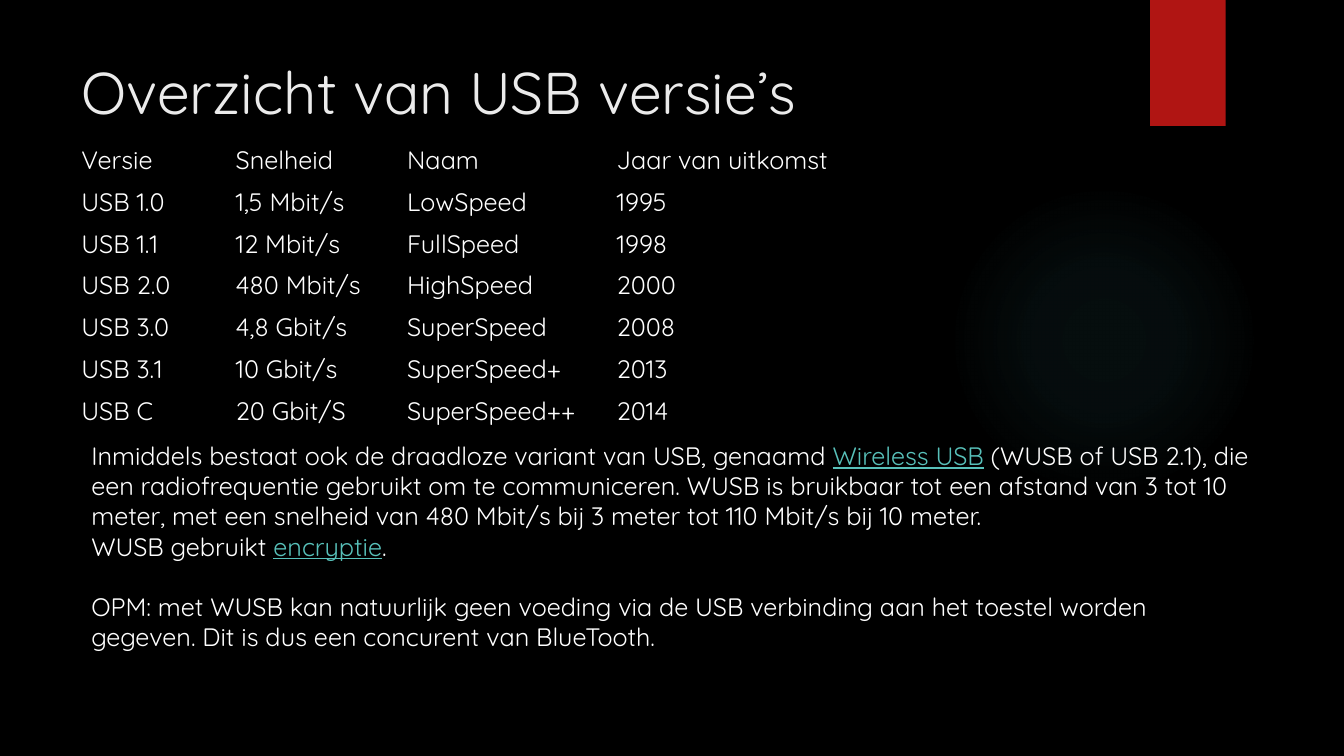
from dataclasses import dataclass

from lxml import etree
from pptx import Presentation
from pptx.dml.color import RGBColor
from pptx.enum.shapes import MSO_SHAPE
from pptx.enum.text import MSO_ANCHOR, MSO_AUTO_SIZE, PP_ALIGN
from pptx.oxml import parse_xml
from pptx.oxml.ns import qn
from pptx.util import Pt

OVAL, RECT = MSO_SHAPE.OVAL, MSO_SHAPE.RECTANGLE
TOP, MIDDLE = MSO_ANCHOR.TOP, MSO_ANCHOR.MIDDLE
NO_FIT, LEFT = MSO_AUTO_SIZE.NONE, PP_ALIGN.LEFT

COLORS = {
    "background": "000000", "title": "EBEBEB", "text": "FFFFFF",
    "link": "58C1BA", "ribbon": "B01513", "glow": "50B9C1", "shadow": "000000",
}
FONT = "Quicksand"
BODY_SIZE = 18
ROW_HEIGHT = 29.87
COLUMN_WIDTHS = (110.16, 122.4, 149.76, 236.16, 16.56)
NO_STYLE_NO_GRID = "{2D5ABB26-0587-4C30-8999-92F81FD0307C}"
A_NS = "http://schemas.openxmlformats.org/drawingml/2006/main"
GLOW_STOPS = ((0, 7), (36, 6), (69, 0))  # position and opacity, in percent

VERSIONS = (
    ("Versie", "Snelheid", "Naam", "Jaar van uitkomst"),
    ("USB 1.0", "1,5 Mbit/s", "LowSpeed", "1995"),
    ("USB 1.1", "12 Mbit/s", "FullSpeed", "1998"),
    ("USB 2.0", "480 Mbit/s", "HighSpeed", "2000"),
    ("USB 3.0", "4,8 Gbit/s", "SuperSpeed", "2008"),
    ("USB 3.1", "10 Gbit/s", "SuperSpeed+", "2013"),
    ("USB C", "20 Gbit/S", "SuperSpeed++", "2014"),
)


@dataclass(frozen=True)
class Span:
    text: str
    link: bool = False


@dataclass(frozen=True)
class Para:
    spans: tuple[Span, ...]
    space_before: float = 0


WIRELESS = (
    Para((
        Span("Inmiddels bestaat ook de draadloze variant van USB, genaamd "),
        Span("Wireless USB", link=True),
        Span(" (WUSB of USB 2.1), die een radiofrequentie gebruikt om te "
             "communiceren. WUSB is bruikbaar tot een afstand van 3 tot 10 meter, "
             "met een snelheid van 480 Mbit/s bij 3 meter tot 110 Mbit/s bij 10 meter."),
    )),
    Para((Span("WUSB gebruikt "), Span("encryptie", link=True), Span("."))),
    Para((
        Span("OPM: met WUSB kan natuurlijk geen voeding via de USB verbinding aan "
             "het toestel worden gegeven. Dit is dus een concurent van BlueTooth."),
    ), space_before=21.6),
)


def rgb(name: str) -> RGBColor:
    return RGBColor.from_string(COLORS[name])


def add_run(p, text: str, size: float = BODY_SIZE, color: str = "text"):
    r = p.add_run()
    r.text = text
    r.font.name, r.font.size = FONT, Pt(size)
    r.font.color.rgb = rgb(color)
    return r


def add_plain_shape(s, kind, left: float, top: float, width: float, height: float):
    sp = s.shapes.add_shape(kind, Pt(left), Pt(top), Pt(width), Pt(height))
    sp.shadow.inherit = False
    sp.line.fill.background()
    return sp


def add_glow(s) -> None:
    """Faint radial gradient that fades out towards its rim."""
    sp = add_plain_shape(s, OVAL, 677.5, 131.8, 221.8, 221.8)
    sp.fill.background()
    stops = "".join(
        f'<a:gs pos="{pos * 1000}"><a:srgbClr val="{COLORS["glow"]}">'
        f'<a:alpha val="{alpha * 1000}"/></a:srgbClr></a:gs>'
        for pos, alpha in GLOW_STOPS)
    gradient = parse_xml(
        f'<a:gradFill xmlns:a="{A_NS}" rotWithShape="1"><a:gsLst>{stops}</a:gsLst>'
        '<a:path path="circle"><a:fillToRect l="50000" t="50000" r="50000" b="50000"/>'
        '</a:path></a:gradFill>')
    sp_pr = sp.element.spPr
    sp_pr.replace(sp_pr.find(qn("a:noFill")), gradient)


def add_ribbon(s) -> None:
    sp = add_plain_shape(s, RECT, 821.5, 0, 54, 90)
    sp.fill.solid()
    sp.fill.fore_color.rgb = rgb("ribbon")
    effects = sp.element.spPr.find(qn("a:effectLst"))
    shadow = etree.SubElement(effects, qn("a:outerShdw"), blurRad=str(Pt(3)),
                              dist=str(Pt(2)), dir="5400000", rotWithShape="0")
    color = etree.SubElement(shadow, qn("a:srgbClr"), val=COLORS["shadow"])
    etree.SubElement(color, qn("a:alpha"), val="45000")


def add_title(s) -> None:
    title = s.shapes.title
    title.left, title.top, title.width, title.height = Pt(51), Pt(36), Pt(741), Pt(85)
    tf = title.text_frame
    tf.vertical_anchor, tf.auto_size, tf.word_wrap = TOP, NO_FIT, True
    p = tf.paragraphs[0]
    p.alignment = LEFT
    add_run(p, "Overzicht van USB versie’s", 42, "title")


def add_versions_table(s) -> None:
    frame = s.shapes.add_table(
        len(VERSIONS), len(COLUMN_WIDTHS), Pt(51), Pt(99.4),
        Pt(sum(COLUMN_WIDTHS)), Pt(ROW_HEIGHT * len(VERSIONS)))
    table = frame.table
    table.first_row = table.horz_banding = False
    next(frame.element.iter(qn("a:tableStyleId"))).text = NO_STYLE_NO_GRID
    for column, width in zip(table.columns, COLUMN_WIDTHS):
        column.width = Pt(width)
    for row, values in zip(table.rows, VERSIONS):
        row.height = Pt(ROW_HEIGHT)
        for cell in row.cells:
            cell.fill.background()
            cell.vertical_anchor = MIDDLE
            cell.margin_top = cell.margin_bottom = Pt(3)
        for cell, value in zip(row.cells, values):
            add_run(cell.text_frame.paragraphs[0], value)


def add_wireless_text(s) -> None:
    tf = s.shapes.add_textbox(Pt(58.1), Pt(311), Pt(843), Pt(160)).text_frame
    tf.word_wrap = True
    for i, para in enumerate(WIRELESS):
        p = tf.add_paragraph() if i else tf.paragraphs[0]
        if para.space_before:
            p.space_before = Pt(para.space_before)
        for span in para.spans:
            r = add_run(p, span.text, color="link" if span.link else "text")
            if span.link:
                r.font.underline = True


def main() -> None:
    prs = Presentation()
    prs.slide_width, prs.slide_height = Pt(960), Pt(540)
    s = prs.slides.add_slide(prs.slide_layouts[5])
    s.background.fill.solid()
    s.background.fill.fore_color.rgb = rgb("background")
    add_glow(s)
    add_ribbon(s)
    add_title(s)
    add_versions_table(s)
    add_wireless_text(s)
    prs.save("out.pptx")


if __name__ == "__main__":
    main()
